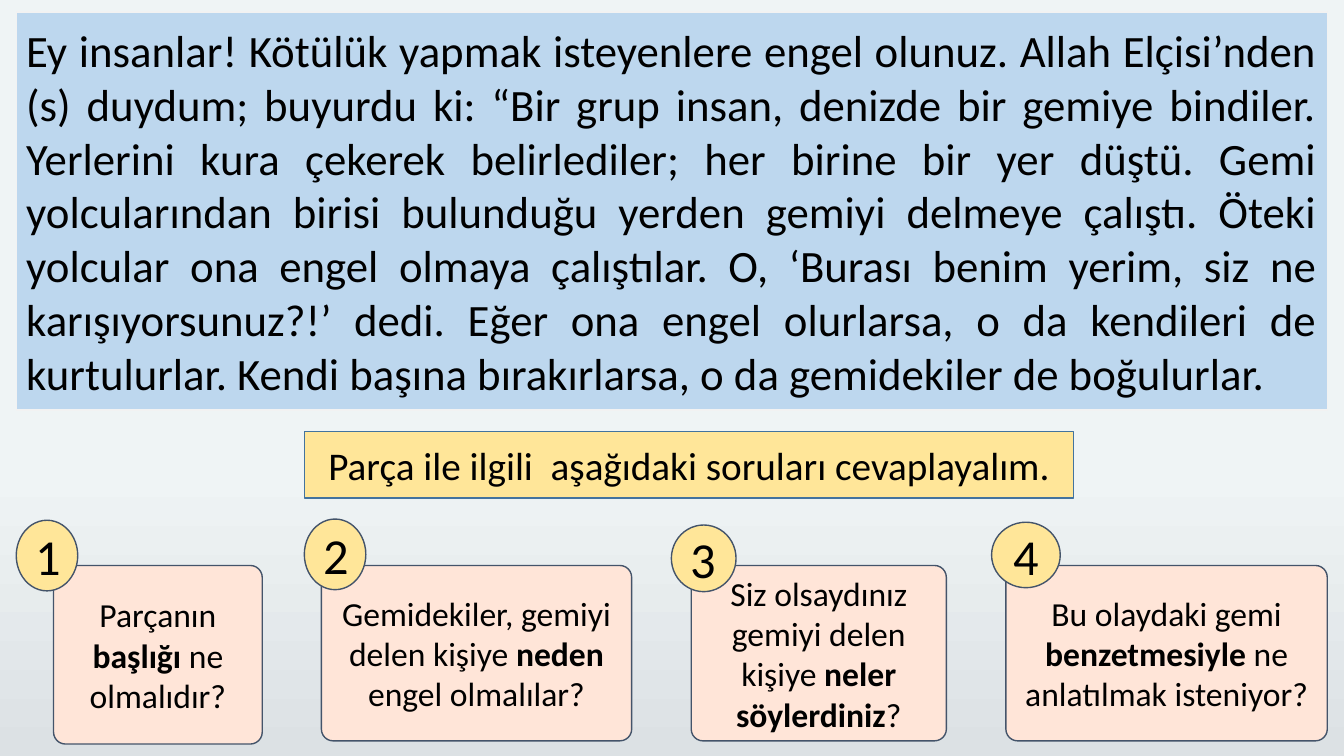
from dataclasses import dataclass

from lxml import etree
from pptx import Presentation
from pptx.dml.color import RGBColor
from pptx.enum.shapes import MSO_SHAPE
from pptx.enum.text import MSO_ANCHOR, MSO_AUTO_SIZE, PP_ALIGN
from pptx.oxml.ns import qn
from pptx.util import Cm, Pt

RECTANGLE = MSO_SHAPE.RECTANGLE
ROUNDED = MSO_SHAPE.ROUNDED_RECTANGLE
OVAL = MSO_SHAPE.OVAL
MIDDLE = MSO_ANCHOR.MIDDLE
NO_AUTOFIT = MSO_AUTO_SIZE.NONE
CENTER = PP_ALIGN.CENTER
JUSTIFY = PP_ALIGN.JUSTIFY

FONT = "Calibri"
BLACK = RGBColor(0x00, 0x00, 0x00)
PALE_BLUE = RGBColor(0xBD, 0xD7, 0xEE)
PALE_GREY = RGBColor(0xF2, 0xF2, 0xF2)
YELLOW = RGBColor(0xFF, 0xE6, 0x99)
BLUE = RGBColor(0x43, 0x73, 0x9E)
PEACH = RGBColor(0xFF, 0xE5, 0xD8)
SLATE = RGBColor(0x44, 0x54, 0x6A)
BACKGROUND_STOPS = (
    (0.62, RGBColor(0xEF, 0xF4, 0xF5)),
    (1.0, RGBColor(0xDC, 0xE1, 0xE4)),
)

CARD_TOP = 14.25
CARD_CORNER = 0.067


@dataclass(frozen=True)
class Box:
    """Position and size in centimetres."""
    left: float
    top: float
    width: float
    height: float


@dataclass(frozen=True)
class Style:
    fill: RGBColor
    line: RGBColor
    size: int
    alignment: PP_ALIGN = CENTER


@dataclass(frozen=True)
class Run:
    text: str
    bold: bool = False


@dataclass(frozen=True)
class Question:
    card: Box
    badge: Box
    runs: tuple[Run, ...]


PASSAGE_STYLE = Style(PALE_BLUE, PALE_GREY, 32, JUSTIFY)
TITLE_STYLE = Style(YELLOW, BLUE, 28)
CARD_STYLE = Style(PEACH, SLATE, 24)
BADGE_STYLE = Style(YELLOW, SLATE, 36)

PASSAGE = (
    "Ey insanlar! Kötülük yapmak isteyenlere engel olunuz. Allah Elçisi’nden (s) "
    "duydum; buyurdu ki: “Bir grup insan, denizde bir gemiye bindiler. Yerlerini "
    "kura çekerek belirlediler; her birine bir yer düştü. Gemi yolcularından birisi "
    "bulunduğu yerden gemiyi delmeye çalıştı. Öteki yolcular ona engel olmaya "
    "çalıştılar. O, ‘Burası benim yerim, siz ne karışıyorsunuz?!’ dedi. Eğer ona "
    "engel olurlarsa, o da kendileri de kurtulurlar. Kendi başına bırakırlarsa, "
    "o da gemidekiler de boğulurlar."
)
TITLE = "Parça ile ilgili  aşağıdaki soruları cevaplayalım."

QUESTIONS = (
    Question(
        Box(1.35, CARD_TOP, 5.26, 4.5), Box(0.41, 13.11, 1.55, 1.78),
        (Run("Parçanın "), Run("başlığı", True), Run(" ne olmalıdır?")),
    ),
    Question(
        Box(8.1, CARD_TOP, 7.82, 4.42), Box(7.67, 13.08, 1.55, 1.78),
        (Run("Gemidekiler, gemiyi delen kişiye "), Run("neden", True),
         Run(" engel olmalılar?")),
    ),
    Question(
        Box(17.42, CARD_TOP, 6.43, 4.42), Box(16.92, 13.23, 1.63, 1.68),
        (Run("Siz olsaydınız gemiyi delen kişiye "),
         Run("neler söylerdiniz", True), Run("?")),
    ),
    Question(
        Box(25.35, CARD_TOP, 8.1, 4.42), Box(24.99, 13.16, 1.73, 1.65),
        (Run("Bu olaydaki gemi "), Run("benzetmesiyle", True),
         Run(" ne anlatılmak isteniyor?")),
    ),
)


def format_shape(shape, style: Style, runs: tuple[Run, ...]) -> None:
    """Apply fill, outline and text to a shape or placeholder."""
    shape.fill.solid()
    shape.fill.fore_color.rgb = style.fill
    shape.line.color.rgb = style.line
    shape.line.width = Pt(1)

    frame = shape.text_frame
    frame.word_wrap = True
    frame.auto_size = NO_AUTOFIT
    frame.vertical_anchor = MIDDLE
    paragraph = frame.paragraphs[0]
    paragraph.alignment = style.alignment
    for item in runs:
        run = paragraph.add_run()
        run.text = item.text
        run.font.name = FONT
        run.font.size = Pt(style.size)
        run.font.bold = item.bold
        run.font.color.rgb = BLACK


def add_box(slide, kind: MSO_SHAPE, box: Box, style: Style, runs: tuple[Run, ...]):
    shape = slide.shapes.add_shape(
        kind, Cm(box.left), Cm(box.top), Cm(box.width), Cm(box.height))
    shape.shadow.inherit = False
    format_shape(shape, style, runs)
    return shape


def place_title(slide, box: Box) -> None:
    """Turn the title placeholder into a rounded banner."""
    title = slide.shapes.title
    title.left, title.top = Cm(box.left), Cm(box.top)
    title.width, title.height = Cm(box.width), Cm(box.height)
    geometry = etree.SubElement(
        title.element.spPr, qn("a:prstGeom"), prst="roundRect")
    etree.SubElement(geometry, qn("a:avLst"))
    format_shape(title, TITLE_STYLE, (Run(TITLE),))


def paint_background(slide) -> None:
    fill = slide.background.fill
    fill.gradient()
    fill.gradient_angle = 270
    for stop, (position, color) in zip(fill.gradient_stops, BACKGROUND_STOPS):
        stop.position = position
        stop.color.rgb = color


def add_question(slide, number: int, question: Question) -> None:
    card = add_box(slide, ROUNDED, question.card, CARD_STYLE, question.runs)
    card.adjustments[0] = CARD_CORNER
    add_box(slide, OVAL, question.badge, BADGE_STYLE, (Run(str(number)),))


def main() -> None:
    presentation = Presentation()
    presentation.slide_width = Cm(33.87)
    presentation.slide_height = Cm(19.05)
    title_only = presentation.slide_layouts.get_by_name("Title Only")
    slide = presentation.slides.add_slide(title_only)

    # Background, reading passage and instruction
    paint_background(slide)
    add_box(slide, RECTANGLE, Box(0.41, 0.3, 33.05, 10.03),
            PASSAGE_STYLE, (Run(PASSAGE),))
    place_title(slide, Box(7.67, 10.87, 19.38, 1.68))

    # Numbered question cards
    for number, question in enumerate(QUESTIONS, start=1):
        add_question(slide, number, question)

    presentation.save("out.pptx")


if __name__ == "__main__":
    main()
